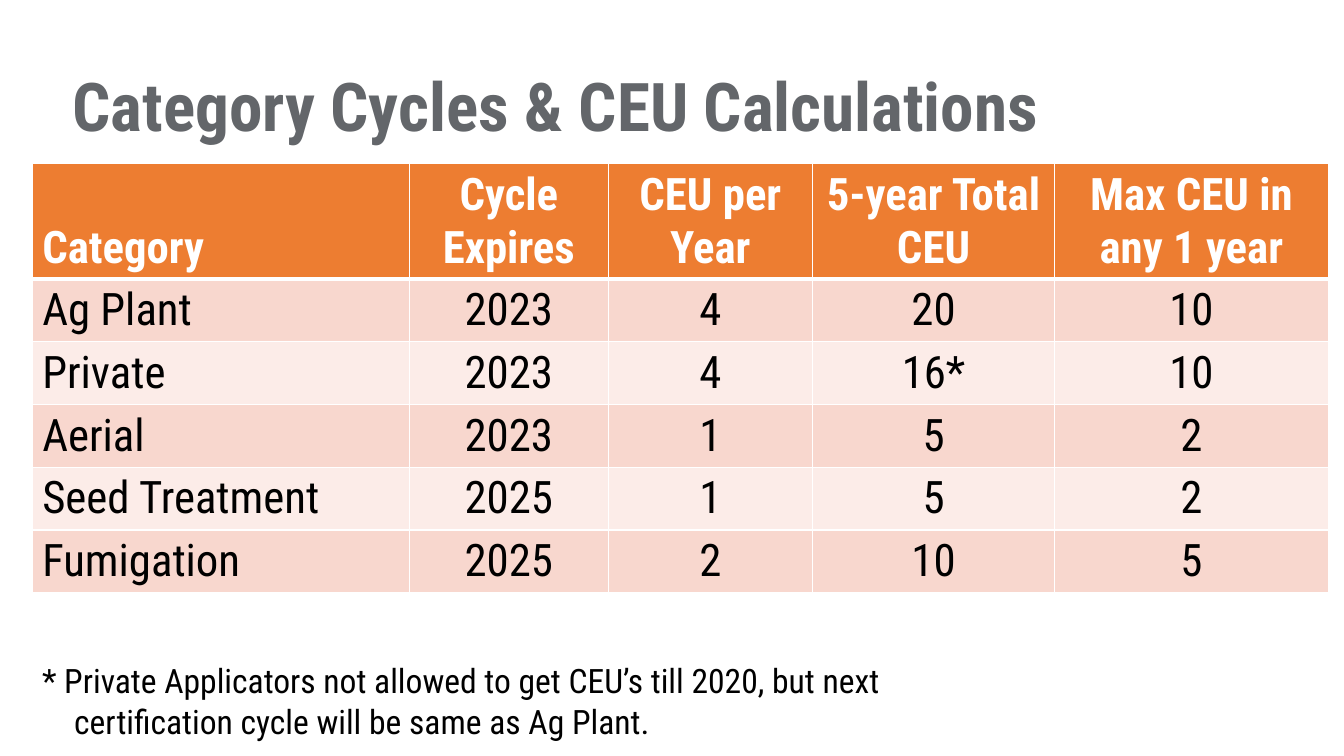
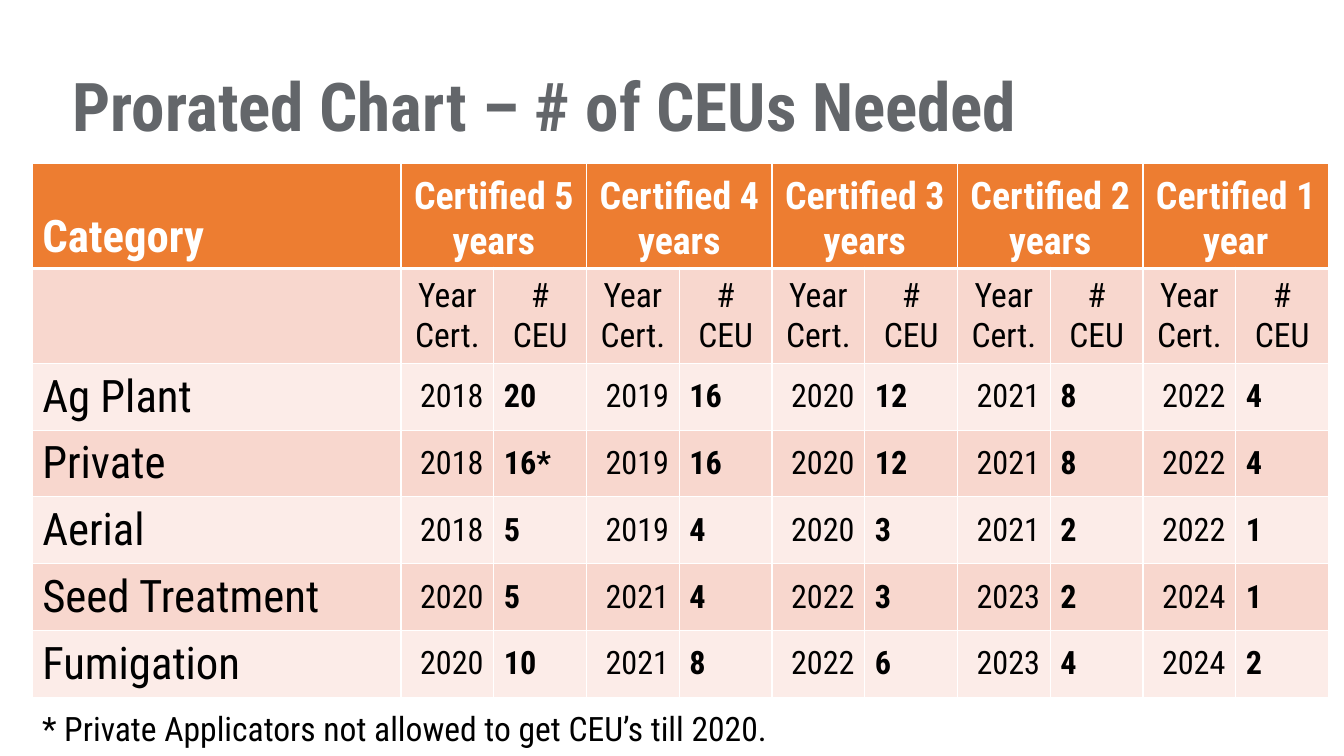
from dataclasses import dataclass

from lxml.etree import SubElement
from pptx import Presentation
from pptx.dml.color import RGBColor
from pptx.enum.text import MSO_ANCHOR as Anchor
from pptx.enum.text import MSO_AUTO_SIZE as AutoSize
from pptx.enum.text import PP_ALIGN as Align
from pptx.oxml import parse_xml
from pptx.oxml.ns import nsdecls, qn
from pptx.util import Pt

# Shared look
FONT = "Roboto Condensed"
ORANGE = RGBColor(0xED, 0x7D, 0x31)
DARK_BAND = RGBColor(0xF8, 0xD7, 0xCE)
LIGHT_BAND = RGBColor(0xFC, 0xEC, 0xE8)
TITLE_GRAY = RGBColor(0x63, 0x66, 0x6A)
WHITE = RGBColor(0xFF, 0xFF, 0xFF)
BLACK = RGBColor(0x00, 0x00, 0x00)

TITLE_ONLY = 5
TABLE_LEFT, TABLE_TOP, TABLE_WIDTH = 23, 117, 926
NOTE_INDENT = 23


@dataclass(frozen=True)
class CellStyle:
    size: float
    align: Align = Align.LEFT
    bold: bool = False
    color: RGBColor = BLACK
    anchor: Anchor = Anchor.MIDDLE


HEAD_LEFT = CellStyle(32, Align.LEFT, True, WHITE, Anchor.BOTTOM)
HEAD_CENTER = CellStyle(32, Align.CENTER, True, WHITE, Anchor.BOTTOM)
HEAD_SPAN = CellStyle(27, Align.CENTER, True, WHITE, Anchor.BOTTOM)
CATEGORY = CellStyle(32)
VALUE = CellStyle(32, Align.CENTER)
SUBHEAD = CellStyle(24, Align.CENTER)
YEAR = CellStyle(23, Align.RIGHT)
CEU = CellStyle(23, bold=True)

# Content
CYCLE_HEADS = ["Category", "Cycle Expires", "CEU per Year",
               "5-year Total CEU", "Max CEU in any 1 year"]
CYCLE_ROWS = [
    ["Ag Plant", "2023", "4", "20", "10"],
    ["Private", "2023", "4", "16*", "10"],
    ["Aerial", "2023", "1", "5", "2"],
    ["Seed Treatment", "2025", "1", "5", "2"],
    ["Fumigation", "2025", "2", "10", "5"],
]
CYCLE_WIDTHS = [269.5, 142, 146, 172.8, 195.7]

SPANS = ["Certified 5 years", "Certified 4 years", "Certified 3 years",
         "Certified 2 years", "Certified 1 year"]
# Category, first certification year, CEUs needed for each later year
PRORATED_ROWS = [
    ("Ag Plant", 2018, ["20", "16", "12", "8", "4"]),
    ("Private", 2018, ["16*", "16", "12", "8", "4"]),
    ("Aerial", 2018, ["5", "4", "3", "2", "1"]),
    ("Seed Treatment", 2020, ["5", "4", "3", "2", "1"]),
    ("Fumigation", 2020, ["10", "8", "6", "4", "2"]),
]
PRORATED_CATEGORY_WIDTH = 263.5


def format_runs(paragraph, size, color, bold=False):
    for run in paragraph.runs:
        font = run.font
        font.name, font.size, font.bold = FONT, Pt(size), bold
        font.color.rgb = color


def add_titled_slide(presentation, text):
    slide = presentation.slides.add_slide(presentation.slide_layouts[TITLE_ONLY])
    title = slide.shapes.title
    title.left, title.top, title.width, title.height = Pt(44.6), Pt(42.5), Pt(904.4), Pt(65.5)
    frame = title.text_frame
    frame.text = text
    frame.word_wrap = True
    frame.auto_size = AutoSize.NONE
    frame.vertical_anchor = Anchor.TOP
    paragraph = frame.paragraphs[0]
    paragraph.alignment = Align.LEFT
    format_runs(paragraph, 48, TITLE_GRAY, bold=True)
    return slide


def add_footnote(slide, text, top, height):
    box = slide.shapes.add_textbox(Pt(TABLE_LEFT), Pt(top), Pt(618), Pt(height))
    frame = box.text_frame
    frame.word_wrap = True
    frame.text = text
    paragraph = frame.paragraphs[0]
    format_runs(paragraph, 24, BLACK)
    # Hanging indent
    properties = paragraph._p.get_or_add_pPr()
    properties.set("marL", str(Pt(NOTE_INDENT)))
    properties.set("indent", str(-Pt(NOTE_INDENT)))


def set_borders(cell, bottom_width):
    """Draw white borders; they must come before the fill in the XML."""
    properties = cell._tc.get_or_add_tcPr()
    widths = {"lnL": 1, "lnR": 1, "lnT": 1, "lnB": bottom_width}
    for position, (tag, width) in enumerate(widths.items()):
        line = parse_xml(f'<a:{tag} {nsdecls("a")} w="{Pt(width)}"/>')
        fill = SubElement(line, qn("a:solidFill"))
        SubElement(fill, qn("a:srgbClr")).set("val", str(WHITE))
        properties.insert(position, line)


def fill_cell(cell, text, style, row_index):
    cell.text = text
    cell.vertical_anchor = style.anchor
    paragraph = cell.text_frame.paragraphs[0]
    paragraph.alignment = style.align
    format_runs(paragraph, style.size, style.color, style.bold)
    band = DARK_BAND if row_index % 2 else LIGHT_BAND
    cell.fill.solid()
    cell.fill.fore_color.rgb = band if row_index else ORANGE
    set_borders(cell, bottom_width=1 if row_index else 3)


def add_banded_table(slide, rows, widths, heights):
    """Each row is a list of (text, style) pairs; row 0 is the header."""
    table = slide.shapes.add_table(
        len(rows), len(widths), Pt(TABLE_LEFT), Pt(TABLE_TOP),
        Pt(TABLE_WIDTH), Pt(sum(heights))).table
    for column, width in zip(table.columns, widths):
        column.width = Pt(width)
    for row_index, (row, height) in enumerate(zip(rows, heights)):
        table.rows[row_index].height = Pt(height)
        for column_index, (text, style) in enumerate(row):
            fill_cell(table.cell(row_index, column_index), text, style, row_index)
    return table


def add_cycles_slide(presentation):
    slide = add_titled_slide(presentation, "Category Cycles & CEU Calculations")
    first, *others = CYCLE_HEADS
    rows = [[(first, HEAD_LEFT)] + [(text, HEAD_CENTER) for text in others]]
    for category, *values in CYCLE_ROWS:
        rows.append([(category, CATEGORY)] + [(value, VALUE) for value in values])
    add_banded_table(slide, rows, CYCLE_WIDTHS, [70.5] + [43.2] * len(CYCLE_ROWS))
    add_footnote(slide, "* Private Applicators not allowed to get CEU’s till 2020, "
                 "but next certification cycle will be same as Ag Plant.", 468, 67.5)


def add_prorated_slide(presentation):
    slide = add_titled_slide(presentation, "Prorated Chart – # of CEUs Needed")
    header, subheader = [("Category", HEAD_LEFT)], [("", SUBHEAD)]
    for span in SPANS:
        header += [(span, HEAD_SPAN), ("", HEAD_SPAN)]
        subheader += [("Year Cert.", SUBHEAD), ("# CEU", SUBHEAD)]
    rows = [header, subheader]
    for category, first_year, credits in PRORATED_ROWS:
        row = [(category, CATEGORY)]
        for year, credit in enumerate(credits, first_year):
            row += [(str(year), YEAR), (credit, CEU)]
        rows.append(row)

    value_columns = 2 * len(SPANS)
    value_width = (TABLE_WIDTH - PRORATED_CATEGORY_WIDTH) / value_columns
    widths = [PRORATED_CATEGORY_WIDTH] + [value_width] * value_columns
    table = add_banded_table(slide, rows, widths,
                             [74.8, 67.8] + [47.7] * len(PRORATED_ROWS))
    for column in range(1, value_columns, 2):
        table.cell(0, column).merge(table.cell(0, column + 1))
    add_footnote(slide, "* Private Applicators not allowed to get CEU’s till 2020.",
                 502, 38)


def main():
    presentation = Presentation()
    presentation.slide_width, presentation.slide_height = Pt(960), Pt(540)
    add_cycles_slide(presentation)
    add_prorated_slide(presentation)
    presentation.save("out.pptx")


if __name__ == "__main__":
    main()
